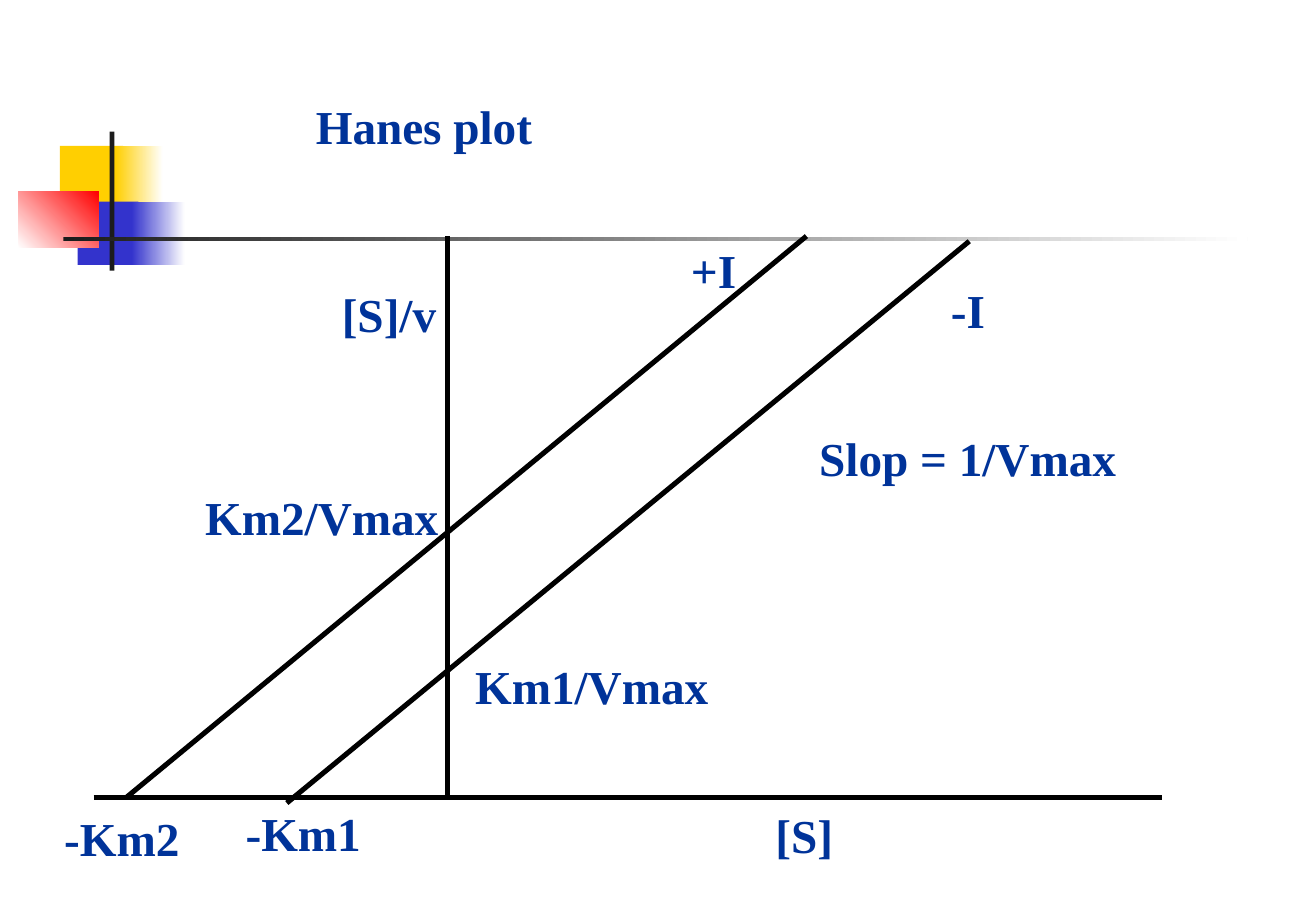
from lxml.etree import SubElement
from pptx import Presentation
from pptx.dml.color import RGBColor
from pptx.enum.shapes import MSO_CONNECTOR as Connector, MSO_SHAPE as Shape
from pptx.enum.text import MSO_ANCHOR as Anchor, MSO_AUTO_SIZE as AutoSize, PP_ALIGN as Align
from pptx.oxml.ns import qn
from pptx.util import Pt

TITLE_ONLY = 5
LABEL_HEIGHT = 41


def color(hex_code):
    return RGBColor.from_string(hex_code)


def write(frame, text, *, font="Times New Roman", size=28, ink="003399", bold=True,
          wrap=False, auto_size=AutoSize.SHAPE_TO_FIT_TEXT):
    """Put one left-aligned, top-anchored run of text into the frame."""
    frame.word_wrap = wrap
    frame.auto_size = auto_size
    frame.vertical_anchor = Anchor.TOP
    para = frame.paragraphs[0]
    para.alignment = Align.LEFT
    span = para.add_run()
    span.text = text
    span.font.name = font
    span.font.size = Pt(size)
    span.font.bold = bold
    span.font.color.rgb = color(ink)


class PlotSlide:
    """Holds the plot's style and the slide being drawn."""

    def __init__(self, deck, line_color="000000", line_width=3):
        self.page = deck.slides.add_slide(deck.slide_layouts[TITLE_ONLY])
        self.line_color = line_color
        self.line_width = line_width

    def title(self, text, left, top, width, height):
        box = self.page.shapes.title
        box.left, box.top, box.width, box.height = map(Pt, (left, top, width, height))
        write(box.text_frame, text, wrap=True, auto_size=AutoSize.NONE)

    def block(self, left, top, width, height, start, end=None, angle=0):
        """Draw a borderless rectangle, solid or fading from start to end."""
        box = self.page.shapes.add_shape(
            Shape.RECTANGLE, Pt(left), Pt(top), Pt(width), Pt(height))
        box.shadow.inherit = False
        box.line.fill.background()
        if end is None:
            box.fill.solid()
            box.fill.fore_color.rgb = color(start)
            return
        box.fill.gradient()
        box.fill.gradient_angle = angle
        for stop, shade, position in zip(box.fill.gradient_stops, (start, end), (0, 1)):
            stop.color.rgb = color(shade)
            stop.position = position

    def line(self, x1, y1, x2, y2):
        line = self.page.shapes.add_connector(
            Connector.STRAIGHT, Pt(x1), Pt(y1), Pt(x2), Pt(y2))
        line.line.color.rgb = color(self.line_color)
        line.line.width = Pt(self.line_width)
        SubElement(line._element.spPr, qn("a:effectLst"))

    def label(self, text, left, top, width):
        box = self.page.shapes.add_textbox(Pt(left), Pt(top), Pt(width), Pt(LABEL_HEIGHT))
        write(box.text_frame, text)


def main():
    deck = Presentation()
    deck.slide_width, deck.slide_height = Pt(780), Pt(540)
    plot = PlotSlide(deck)

    yellow, blue, red, dark, white = "FFCF01", "3333CC", "FF0000", "1C1C1C", "FFFFFF"
    plot.block(35.5, 86.5, 37.5, 37.5, yellow)
    plot.block(68.5, 86.5, 28, 37.5, yellow, white)
    plot.block(46, 119.5, 36, 37.5, blue)
    plot.block(78, 119.5, 31.5, 37.5, blue, white)
    plot.block(11, 113.5, 47.5, 33.5, white, red, angle=45)
    plot.block(65, 78, 2.8, 82.5, dark)
    plot.block(37.5, 140.4, 702, 2.4, dark, white)

    plot.title("Hanes plot", 180, 54, 474, LABEL_HEIGHT)

    x_axis, y_axis, plot_top = 473, 265, 140
    plot.line(y_axis, plot_top, y_axis, x_axis + 1.5)
    plot.line(55.5, x_axis, 689, x_axis)
    plot.line(478, plot_top, 74.5, x_axis)
    plot.line(574.5, 143, 170, 476)

    for label in (
        ("Km1/Vmax", 274.5, 386, 154),
        ("-Km2", 31, 476, 83.5),
        ("Slop = 1/Vmax", 478.5, 251, 193),
        ("[S]", 452.5, 474.5, 49),
        ("[S]/v", 195.5, 165.5, 71),
        ("Km2/Vmax", 114.5, 286, 154),
        ("-Km1", 138.5, 473, 83.5),
        ("-I", 556.5, 163, 35),
        ("+I", 402.5, 139.5, 42),
    ):
        plot.label(*label)

    deck.save("out.pptx")


if __name__ == "__main__":
    main()
